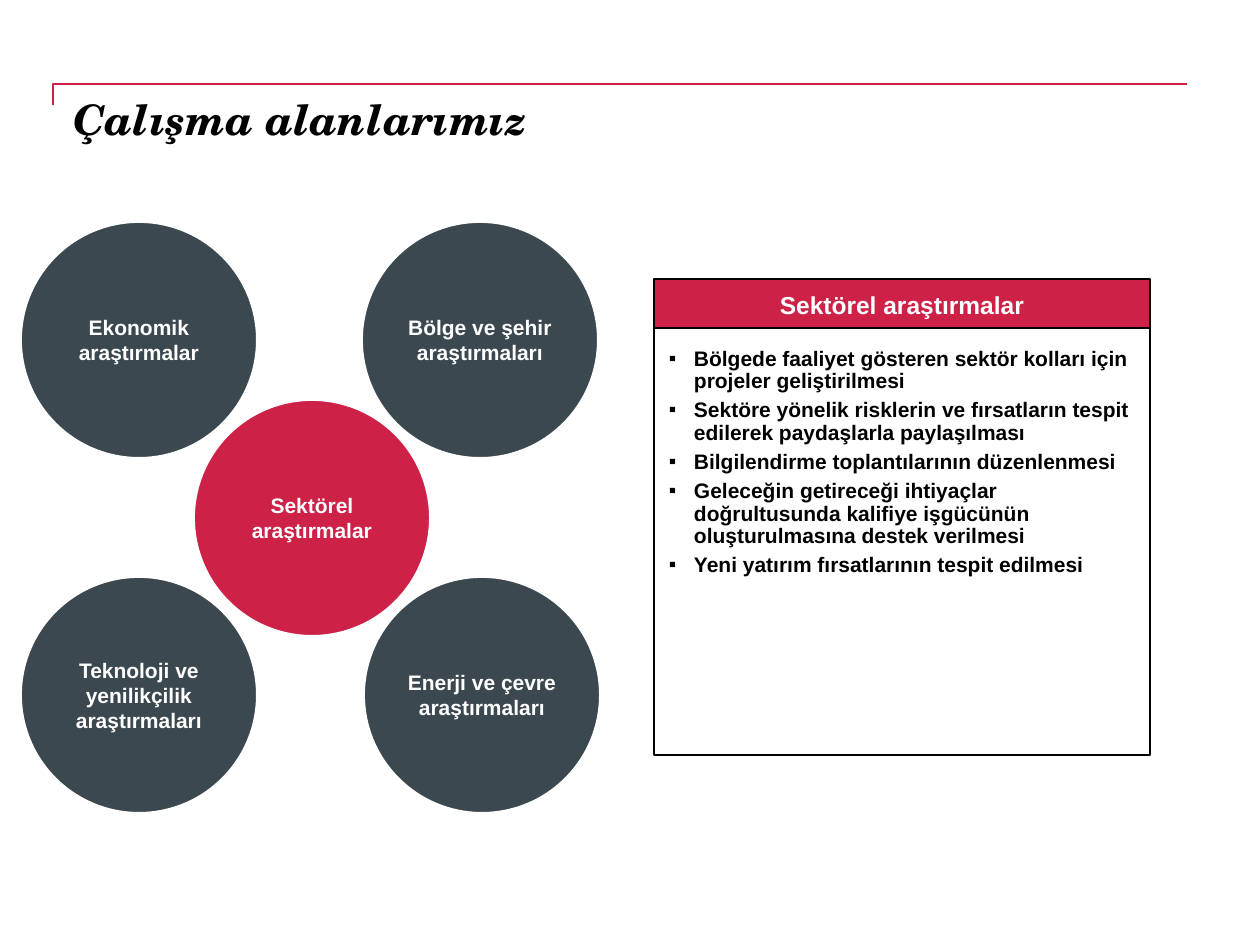
from dataclasses import dataclass

from lxml.etree import SubElement
from pptx import Presentation
from pptx.dml.color import RGBColor
from pptx.enum.shapes import MSO_SHAPE
from pptx.enum.text import MSO_ANCHOR, PP_ALIGN
from pptx.oxml.ns import qn
from pptx.util import Pt

PX = 914400 / 126


@dataclass(frozen=True)
class Theme:
    red: RGBColor = RGBColor(0xCD, 0x21, 0x47)
    slate: RGBColor = RGBColor(0x3C, 0x48, 0x4F)
    black: RGBColor = RGBColor(0, 0, 0)
    white: RGBColor = RGBColor(0xFF, 0xFF, 0xFF)
    title_font: str = "TeX Gyre Schola"
    body_font: str = "Arial"
    title_size: int = 24
    heading_size: int = 14
    body_size: int = 12


THEME = Theme()

TITLE = "Çalışma alanlarımız"
FOCUS_AREA = "Sektörel araştırmalar"
# Left and top within the diagram, then the label
OUTER_AREAS = [
    (0, 0, "Ekonomik araştırmalar"),
    (0, 355, "Teknoloji ve yenilikçilik araştırmaları"),
    (341, 0, "Bölge ve şehir araştırmaları"),
    (343, 355, "Enerji ve çevre araştırmaları"),
]
FOCUS_POINTS = [
    "Bölgede faaliyet gösteren sektör kolları için projeler geliştirilmesi",
    "Sektöre yönelik risklerin ve fırsatların tespit edilerek paydaşlarla paylaşılması",
    "Bilgilendirme toplantılarının düzenlenmesi",
    "Geleceğin getireceği ihtiyaçlar doğrultusunda kalifiye işgücünün "
    "oluşturulmasına destek verilmesi",
    "Yeni yatırım fırsatlarının tespit edilmesi",
]


def px(length):
    return round(length * PX)


def set_font(paragraph, size, color, name=THEME.body_font):
    font = paragraph.font
    font.name, font.size, font.bold = name, Pt(size), True
    font.color.rgb = color


def set_frame(text_frame, insets=(0, 0, 0, 0), anchor=MSO_ANCHOR.TOP):
    text_frame.word_wrap = True
    text_frame.vertical_anchor = anchor
    (text_frame.margin_left, text_frame.margin_top,
     text_frame.margin_right, text_frame.margin_bottom) = map(px, insets)


def add_filled_shape(slide, kind, box, fill, line_color, line_width):
    shape = slide.shapes.add_shape(kind, *map(px, box))
    shape.shadow.inherit = False
    shape.fill.solid()
    shape.fill.fore_color.rgb = fill
    shape.line.color.rgb = line_color
    shape.line.width = Pt(line_width)
    return shape


def add_label(shape, text, size):
    """Centre a white label in the shape."""
    set_frame(shape.text_frame, anchor=MSO_ANCHOR.MIDDLE)
    paragraph = shape.text_frame.paragraphs[0]
    paragraph.text = text
    paragraph.alignment = PP_ALIGN.CENTER
    set_font(paragraph, size, THEME.white)


def add_bullet(paragraph, indent):
    properties = paragraph._p.get_or_add_pPr()
    properties.set("marL", str(px(indent)))
    properties.set("indent", str(-px(indent)))
    color = SubElement(properties, qn("a:buClr"))
    SubElement(color, qn("a:srgbClr"), val=str(THEME.black))
    SubElement(properties, qn("a:buFont"), typeface=THEME.body_font)
    SubElement(properties, qn("a:buChar"), char="▪")


def add_title(slide, left, top, width, height):
    """Place the title under a corner rule that starts at the box's top left."""
    builder = slide.shapes.build_freeform(left, top + 21, scale=PX)
    builder.add_line_segments([(left, top), (left + width, top)], close=False)
    rule = builder.convert_to_shape()
    rule.shadow.inherit = False
    rule.fill.background()
    rule.line.color.rgb = THEME.red
    rule.line.width = Pt(1)

    text_box = slide.shapes.add_textbox(
        px(left + 20), px(top + 10), px(width - 20), px(height - 10))
    set_frame(text_box.text_frame)
    paragraph = text_box.text_frame.paragraphs[0]
    paragraph.text = TITLE
    set_font(paragraph, THEME.title_size, THEME.black, THEME.title_font)
    paragraph.font.italic = True


def add_area_diagram(slide, left, top, diameter):
    """Place four outer circles, with the focus circle in front of them."""
    circles = [(*area, THEME.slate) for area in OUTER_AREAS]
    circles.append((173, 178, FOCUS_AREA, THEME.red))
    for x, y, label, fill in circles:
        box = (left + x, top + y, diameter, diameter)
        circle = add_filled_shape(
            slide, MSO_SHAPE.OVAL, box, fill, THEME.white, 2.25)
        add_label(circle, label, THEME.body_size)


def add_focus_panel(slide, left, top, width, height):
    header_height = 49
    header = add_filled_shape(
        slide, MSO_SHAPE.RECTANGLE, (left, top, width, header_height + 3),
        THEME.red, THEME.black, 0.75)
    add_label(header, FOCUS_AREA, THEME.heading_size)

    body_box = (left, top + header_height, width, height - header_height)
    body = add_filled_shape(
        slide, MSO_SHAPE.RECTANGLE, body_box, THEME.white, THEME.black, 0.75)
    text_frame = body.text_frame
    set_frame(text_frame, insets=(15, 20, 10, 5))
    for index, point in enumerate(FOCUS_POINTS):
        paragraph = text_frame.add_paragraph() if index else text_frame.paragraphs[0]
        paragraph.text = point
        paragraph.alignment = PP_ALIGN.LEFT
        paragraph.line_spacing = 0.9
        paragraph.space_before = Pt(3.6 if index else 0)
        add_bullet(paragraph, indent=25)
        set_font(paragraph, THEME.body_size, THEME.black)


def main():
    presentation = Presentation()
    presentation.slide_width, presentation.slide_height = px(1260), px(945)
    slide = presentation.slides.add_slide(presentation.slide_layouts[6])
    add_title(slide, 53, 84, 1134, 136)
    add_area_diagram(slide, 20, 221, 238)
    add_focus_panel(slide, 654, 279, 496, 476)
    presentation.save("out.pptx")


if __name__ == "__main__":
    main()
